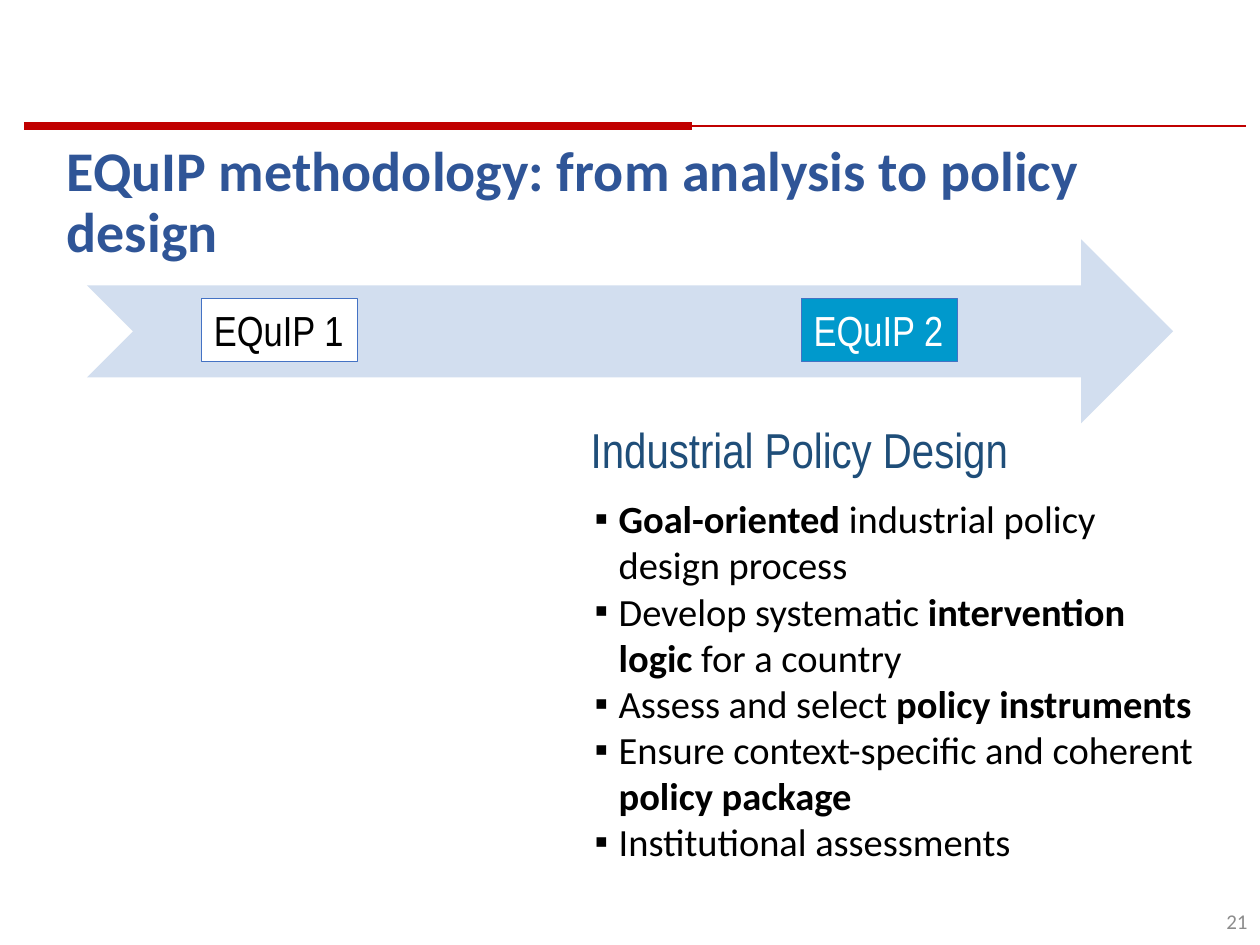
from lxml.etree import SubElement
from pptx import Presentation
from pptx.dml.color import RGBColor
from pptx.enum.shapes import MSO_CONNECTOR, MSO_SHAPE
from pptx.enum.text import MSO_ANCHOR, MSO_AUTO_SIZE, PP_ALIGN
from pptx.oxml.ns import qn
from pptx.util import Inches, Pt


def rgb(value):
    return RGBColor.from_string(value)


class SlideBuilder:
    body_font = "Calibri"
    label_font = "Arial Narrow"
    rule_color = "C00000"
    label_border = "4472C4"

    def __init__(self, slide):
        self.slide = slide

    def place(self, sp, left, top, width, height):
        sp.left, sp.top = Inches(left), Inches(top)
        sp.width, sp.height = Inches(width), Inches(height)

    def frame(self, sp, anchor=MSO_ANCHOR.MIDDLE, wrap=True):
        tf = sp.text_frame
        tf.auto_size = MSO_AUTO_SIZE.NONE
        tf.word_wrap = wrap
        tf.vertical_anchor = anchor
        return tf

    def run(self, p, text, size, color, font, bold=False):
        r = p.add_run()
        r.text = text
        r.font.size = Pt(size)
        r.font.name = font
        r.font.bold = bold
        r.font.color.rgb = rgb(color)

    def title(self, text, *box):
        sp = self.slide.shapes.title
        self.place(sp, *box)
        p = self.frame(sp).paragraphs[0]
        p.alignment = PP_ALIGN.LEFT
        p.line_spacing = 0.9
        self.run(p, text, 32, "2F5597", self.body_font, True)

    def bullets(self, items, *box):
        sp = self.slide.placeholders[1]
        self.place(sp, *box)
        tf = self.frame(sp, MSO_ANCHOR.TOP)
        for i, parts in enumerate(items):
            p = tf.add_paragraph() if i else tf.paragraphs[0]
            pPr = p._p.get_or_add_pPr()
            pPr.set("marL", str(Inches(0.19)))
            pPr.set("indent", str(-Inches(0.19)))
            SubElement(pPr, qn("a:buFont"), typeface="Arial")
            SubElement(pPr, qn("a:buChar"), char="▪")
            p.space_before = Pt(0)
            for text, bold in parts:
                self.run(p, text, 22, "000000", self.body_font, bold)

    def text(self, text, box, size, color, font, align=PP_ALIGN.LEFT, wrap=True):
        sp = self.slide.shapes.add_textbox(*map(Inches, box))
        p = self.frame(sp, wrap=wrap).paragraphs[0]
        p.alignment = align
        self.run(p, text, size, color, font)

    def shape(self, kind, box, fill, border=None):
        sp = self.slide.shapes.add_shape(kind, *map(Inches, box))
        sp.shadow.inherit = False
        sp.fill.solid()
        sp.fill.fore_color.rgb = rgb(fill)
        if border:
            sp.line.color.rgb = rgb(border)
            sp.line.width = Pt(0.75)
        else:
            sp.line.fill.background()
        return sp

    def label(self, text, left, fill, color):
        box = (left, 2.37, 1.24, 0.5)
        sp = self.shape(MSO_SHAPE.RECTANGLE, box, fill, self.label_border)
        p = self.frame(sp, wrap=False).paragraphs[0]
        p.alignment = PP_ALIGN.LEFT
        self.run(p, text, 24, color, self.label_font)

    def rule(self, start, end, width):
        line = self.slide.shapes.add_connector(
            MSO_CONNECTOR.STRAIGHT, Inches(start), Inches(1), Inches(end), Inches(1))
        line.line.color.rgb = rgb(self.rule_color)
        line.line.width = Pt(width)
        SubElement(line._element.spPr, qn("a:effectLst"))


def main():
    prs = Presentation()
    prs.slide_width, prs.slide_height = Inches(10), Inches(7.5)
    s = SlideBuilder(prs.slides.add_slide(prs.slide_layouts[1]))

    s.text("21", (7.75, 7.11, 2.25, 0.4), 12, "8C8C8C", s.body_font, PP_ALIGN.RIGHT)
    s.rule(0.19, 5.49, 4.5)
    s.rule(2.67, 9.89, 0.75)
    s.title("EQuIP methodology: from analysis to policy design", 0.43, 1.13, 9.06, 0.98)
    s.shape(MSO_SHAPE.NOTCHED_RIGHT_ARROW, (0.69, 1.9, 8.62, 1.46), "D2DEEF")
    s.label("EQuIP 1", 1.6, "FFFFFF", "000000")
    s.label("EQuIP 2", 6.36, "0099CC", "FFFFFF")
    s.text("Industrial Policy Design", (4.59, 3.28, 3.64, 0.57), 28, "1F4E79",
           s.label_font, wrap=False)
    s.bullets([
        [("Goal-oriented", True), (" industrial policy design process", False)],
        [("Develop systematic ", False), ("intervention logic", True),
         (" for a country", False)],
        [("Assess and select ", False), ("policy instruments", True)],
        [("Ensure context-specific and coherent ", False), ("policy package", True)],
        [("Institutional assessments", False)],
    ], 4.62, 3.88, 5, 3.06)

    prs.save("out.pptx")


if __name__ == "__main__":
    main()
